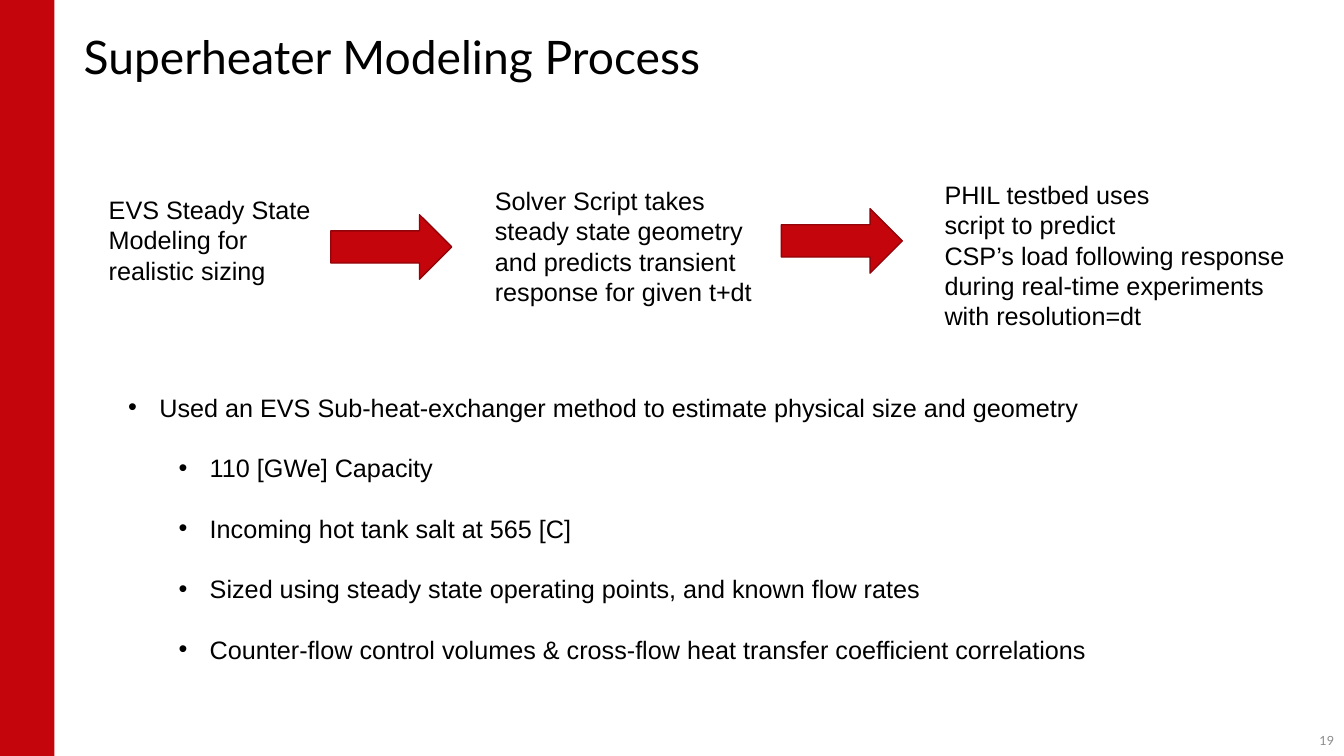
from lxml import etree
from pptx import Presentation
from pptx.dml.color import RGBColor
from pptx.enum.shapes import MSO_SHAPE
from pptx.enum.text import MSO_ANCHOR, MSO_AUTO_SIZE, PP_ALIGN
from pptx.oxml.ns import qn
from pptx.util import Inches, Pt

RECT, ARROW = MSO_SHAPE.RECTANGLE, MSO_SHAPE.RIGHT_ARROW
TOP, MIDDLE = MSO_ANCHOR.TOP, MSO_ANCHOR.MIDDLE
LEFT, RIGHT = PP_ALIGN.LEFT, PP_ALIGN.RIGHT
NO_FIT = MSO_AUTO_SIZE.NONE

THEME = dict(
    red=RGBColor(0xC5, 0x05, 0x0C), edge=RGBColor(0x92, 0x04, 0x09),
    black=RGBColor(0, 0, 0), gray=RGBColor(0x8C, 0x8C, 0x8C),
    heading="Lato", text="Arial",
    title=Pt(33), body=Pt(18), number=Pt(9), line=Pt(21.6),
)

prs = Presentation()
prs.slide_width, prs.slide_height = Inches(13.33), Inches(7.5)
s = prs.slides.add_slide(prs.slide_layouts[1])


def box(x, y, w, h):
    """Turn percentages of the slide's width and height into lengths."""
    W, H = prs.slide_width, prs.slide_height
    return [int(v * side / 100) for v, side in ((x, W), (y, H), (w, W), (h, H))]


def write(sp, lines, font=THEME["text"], size=THEME["body"], color=THEME["black"],
          align=LEFT, anchor=TOP, spacing=THEME["line"], gap=0, indents=None):
    """Fill a shape with paragraphs; indents gives each one a bullet and its depth."""
    tf = sp.text_frame
    tf.word_wrap, tf.auto_size, tf.vertical_anchor = True, NO_FIT, anchor
    for i, line in enumerate(lines):
        p = tf.paragraphs[0] if i == 0 else tf.add_paragraph()
        p.alignment, p.line_spacing = align, spacing
        p.space_before, p.space_after = Pt(0), gap
        if indents:
            p.level = min(i, 1)
            pPr = p._p.get_or_add_pPr()
            pPr.set("marL", str(indents[p.level]))
            pPr.set("indent", str(-indents[0]))
            etree.SubElement(pPr, qn("a:buFont")).set("typeface", "Arial")
            etree.SubElement(pPr, qn("a:buChar")).set("char", "•")
        r = p.add_run()
        r.text = line
        r.font.name, r.font.size, r.font.color.rgb = font, size, color


# Red side bar and the two process arrows
for kind, place, edge in (
    (RECT, (0, 0, 4.05, 100), None),
    (ARROW, (24.61, 28.4, 9, 8.53), THEME["edge"]),
    (ARROW, (58.14, 27.6, 9, 8.53), THEME["edge"]),
):
    sp = s.shapes.add_shape(kind, *box(*place))
    sp.shadow.inherit = False
    sp.fill.solid()
    sp.fill.fore_color.rgb = THEME["red"]
    if edge is None:
        sp.line.fill.background()
    else:
        sp.line.color.rgb, sp.line.width = edge, Pt(1)

# Title and bullet list
title, body = s.shapes.title, s.placeholders[1]
for sp, place in ((title, (5.48, 3.2, 86.27, 9.33)), (body, (8.78, 51.2, 86.27, 45))):
    sp.left, sp.top, sp.width, sp.height = box(*place)

write(title, ["Superheater Modeling Process"], font=THEME["heading"],
      size=THEME["title"], anchor=MIDDLE, spacing=0.9)
write(body, [
    "Used an EVS Sub-heat-exchanger method to estimate physical size and geometry",
    "110 [GWe] Capacity",
    "Incoming hot tank salt at 565 [C]",
    "Sized using steady state operating points, and known flow rates",
    "Counter-flow control volumes & cross-flow heat transfer coefficient correlations",
], gap=THEME["line"], indents=(Inches(0.31), Inches(0.81)))

# Process steps
for place, lines in (
    ((7.35, 25.07, 18.45, 13.47), ["EVS Steady State", "Modeling for realistic sizing"]),
    ((36.08, 23.87, 21.3, 17.47), ["Solver Script takes steady state geometry and "
                                   "predicts transient response for given t+dt"]),
    ((69.54, 23.07, 29.18, 21.6), ["PHIL testbed uses", "script to predict",
                                   "CSP’s load following response during real-time experiments",
                                   "with resolution=dt"]),
):
    write(s.shapes.add_textbox(*box(*place)), lines)

# Page number
write(s.shapes.add_textbox(*box(77.5, 95.87, 22.5, 4.13)), ["19"], font=THEME["heading"],
      size=THEME["number"], color=THEME["gray"], align=RIGHT, anchor=MIDDLE, spacing=1.0)

prs.save("out.pptx")
